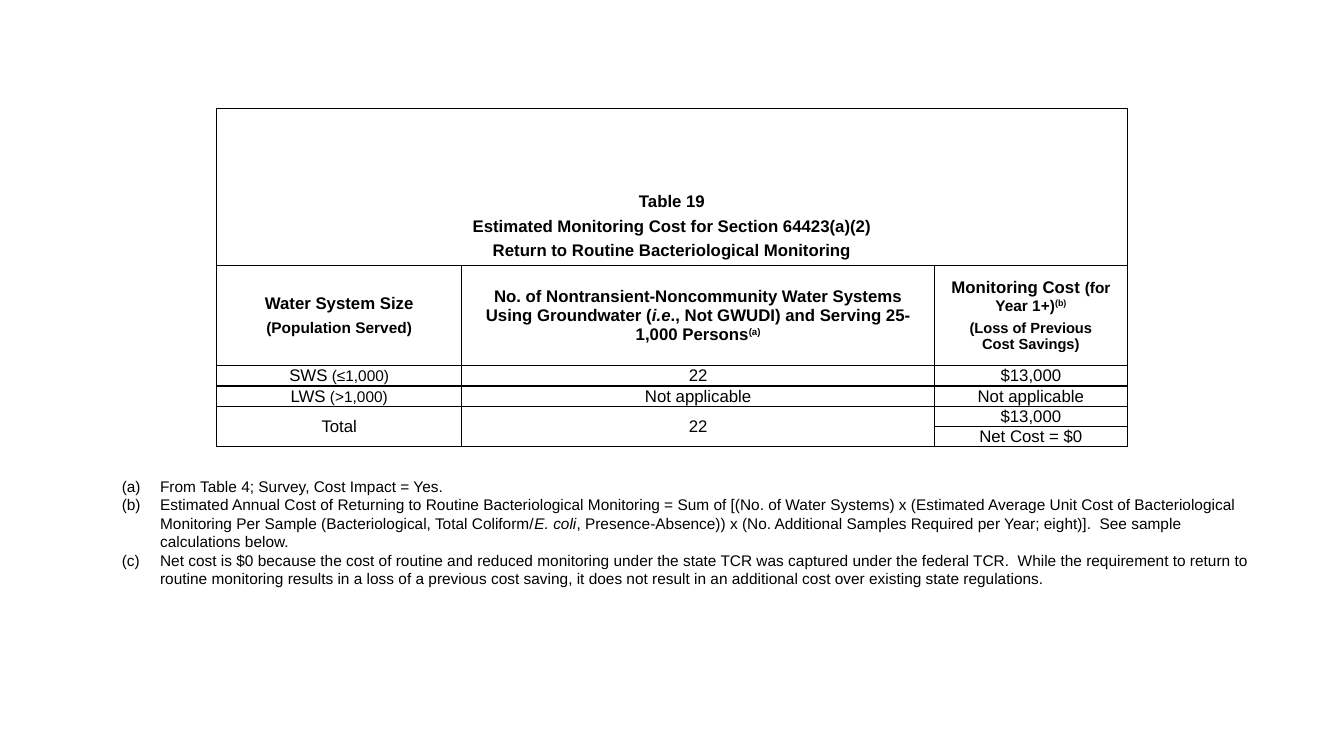
from dataclasses import dataclass
from lxml.etree import SubElement, fromstring
from pptx import Presentation
from pptx.dml.color import RGBColor
from pptx.enum.text import MSO_ANCHOR as Anchor, MSO_AUTO_SIZE as AutoSize, PP_ALIGN as Align
from pptx.oxml.ns import nsdecls, qn
from pptx.util import Inches, Pt


@dataclass
class Theme:
    font: str = "Arial"
    ink: RGBColor = RGBColor(0, 0, 0)
    body: float = 12
    note: float = 11
    small: float = 10.5
    border: float = 1
    gap: float = 2


theme = Theme()


def add_runs(paragraph, pieces, size, bold=False):
    for piece in pieces:
        text, style = piece if isinstance(piece, tuple) else (piece, {})
        if text == "\n":
            paragraph.add_line_break()
            continue
        run = paragraph.add_run()
        run.text = text
        run.font.name = theme.font
        run.font.size = Pt(style.get("size", size))
        run.font.bold = bold
        run.font.italic = style.get("italic", False)
        run.font.color.rgb = theme.ink
        if "raised" in style:
            run.font._element.set("baseline", "30000")


def add_borders(cell):
    properties = cell._tc.get_or_add_tcPr()
    for index, side in enumerate(("lnL", "lnR", "lnT", "lnB")):
        properties.insert(index, fromstring(
            f'<a:{side} {nsdecls("a")} w="{Pt(theme.border)}"><a:solidFill>'
            f'<a:srgbClr val="{theme.ink}"/></a:solidFill></a:{side}>'))


italic = {"italic": True}
raised = {"raised": True}
note = {"size": theme.note}
small = {"size": theme.small}

presentation = Presentation()
presentation.slide_width = Inches(13.33)
presentation.slide_height = Inches(7.5)
slide = presentation.slides.add_slide(presentation.slide_layouts[6])

column_widths = [2.43, 4.69, 1.91]
row_heights = [1.55, 1] + [0.2] * 4
header_rows = 2
cell_texts = {
    (0, 0): [["Table 19"],
             ["Estimated Monitoring Cost for Section 64423(a)(2)"],
             ["Return to Routine Bacteriological Monitoring"]],
    (1, 0): [["Water System Size"], [("(Population Served)", note)]],
    (1, 1): [["No. of Nontransient-Noncommunity Water Systems Using Groundwater (",
              ("i.e", italic), "., Not GWUDI) and Serving 25-1,000 Persons", ("(a)", raised)]],
    (1, 2): [["Monitoring Cost ", ("(for Year 1+)", note), ("(b)", {**note, **raised})],
             [("(Loss of Previous", small), "\n", ("Cost Savings)", small)]],
    (2, 0): [["SWS", (" (≤1,000)", note)]],
    (2, 1): [["22"]],
    (2, 2): [["$13,000"]],
    (3, 0): [["LWS", (" (>1,000)", note)]],
    (3, 1): [["Not applicable"]],
    (3, 2): [["Not applicable"]],
    (4, 0): [["Total"]],
    (4, 1): [["22"]],
    (4, 2): [["$13,000"]],
    (5, 2): [["Net Cost = $0"]],
}

table = slide.shapes.add_table(
    len(row_heights), len(column_widths), Inches(2.15), Inches(1.08),
    Inches(sum(column_widths)), Inches(sum(row_heights))).table
table.first_row = table.horz_banding = False
for column, width in zip(table.columns, column_widths):
    column.width = Inches(width)
for row, height in zip(table.rows, row_heights):
    row.height = Inches(height)

table.cell(0, 0).merge(table.cell(0, 2))
for column_index in range(2):
    table.cell(4, column_index).merge(table.cell(5, column_index))

for cell in table.iter_cells():
    cell.fill.background()
    cell.margin_left = cell.margin_right = Inches(0.07)
    cell.margin_top = cell.margin_bottom = 0
    cell.vertical_anchor = Anchor.MIDDLE
    add_borders(cell)

for (row_index, column_index), lines in cell_texts.items():
    text_frame = table.cell(row_index, column_index).text_frame
    for index, pieces in enumerate(lines):
        paragraph = text_frame.add_paragraph() if index else text_frame.paragraphs[0]
        paragraph.alignment = Align.CENTER
        paragraph.space_before = paragraph.space_after = Pt(theme.gap)
        add_runs(paragraph, pieces, theme.body, row_index < header_rows)

title_cell = table.cell(0, 0)
title_cell.vertical_anchor = Anchor.BOTTOM
title_cell.margin_bottom = Inches(0.05)

footnotes = [
    (["From Table 4; Survey, Cost Impact = Yes."], theme.gap, 0),
    (["Estimated Annual Cost of Returning to Routine Bacteriological Monitoring = Sum of "
      "[(No. of Water Systems) x (Estimated Average Unit Cost of Bacteriological Monitoring "
      "Per Sample (Bacteriological, Total Coliform/", ("E. coli", italic),
      ", Presence-Absence)) x (No. Additional Samples Required per Year; eight)].  "
      "See sample calculations below."], 0, 0),
    (["Net cost is $0 because the cost of routine and reduced monitoring under the state TCR "
      "was captured under the federal TCR.  While the requirement to return to routine "
      "monitoring results in a loss of a previous cost saving, it does not result in an "
      "additional cost over existing state regulations."], 0, 24),
]
footnote_box = slide.shapes.add_textbox(Inches(1.11), Inches(4.68), Inches(11.4), Inches(1.21))
text_frame = footnote_box.text_frame
text_frame.word_wrap = True
text_frame.auto_size = AutoSize.SHAPE_TO_FIT_TEXT
for index, (pieces, before, after) in enumerate(footnotes):
    paragraph = text_frame.add_paragraph() if index else text_frame.paragraphs[0]
    paragraph.space_before = Pt(before)
    paragraph.space_after = Pt(after)
    properties = paragraph._p.get_or_add_pPr()
    properties.set("marL", str(Inches(0.38)))
    properties.set("indent", str(-Inches(0.38)))
    SubElement(properties, qn("a:buFont"), typeface=theme.font)
    SubElement(properties, qn("a:buAutoNum"), type="alphaLcParenBoth")
    add_runs(paragraph, pieces, theme.note)

presentation.save("out.pptx")
